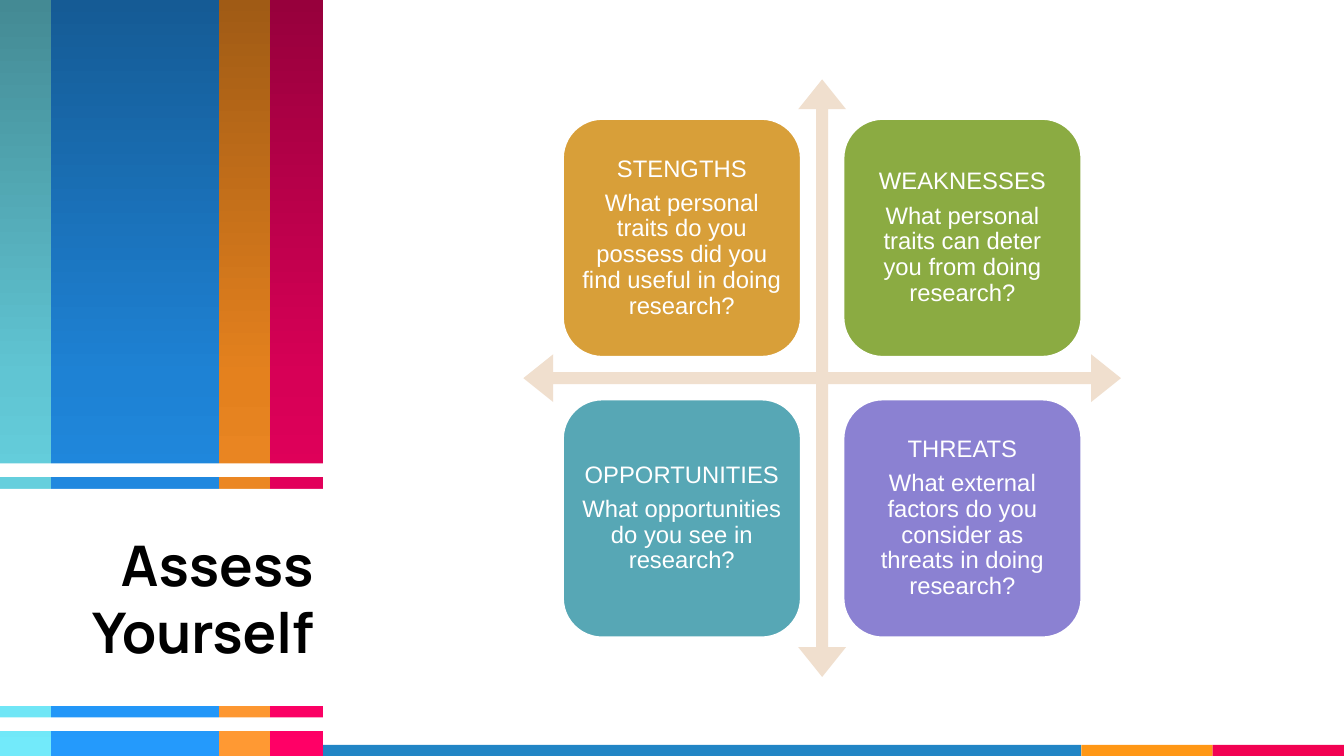
import copy

import pptx
import pptx.util
import pptx.dml.color
import pptx.enum.shapes
import pptx.enum.text

Cm = pptx.util.Cm
Pt = pptx.util.Pt
RGBColor = pptx.dml.color.RGBColor
MSO_SHAPE = pptx.enum.shapes.MSO_SHAPE
PP_ALIGN = pptx.enum.text.PP_ALIGN
MSO_ANCHOR = pptx.enum.text.MSO_ANCHOR
MSO_AUTO_SIZE = pptx.enum.text.MSO_AUTO_SIZE

WHITE = RGBColor(0xFF, 0xFF, 0xFF)
BLACK = RGBColor(0x00, 0x00, 0x00)
SAND = RGBColor(0xF0, 0xDF, 0xCE)
OCHRE = RGBColor(0xD8, 0x9F, 0x39)
GREEN = RGBColor(0x8B, 0xAB, 0x42)
TEAL = RGBColor(0x57, 0xA7, 0xB5)
VIOLET = RGBColor(0x8B, 0x81, 0xD2)
FOOTER_BLUE = RGBColor(0x21, 0x85, 0xC5)
FOOTER_ORANGE = RGBColor(0xFF, 0x97, 0x15)
FOOTER_PINK = RGBColor(0xF2, 0x02, 0x53)
CYAN_RAMP = (RGBColor(0x44, 0x8A, 0x94), RGBColor(0x60, 0xC5, 0xD3), RGBColor(0x72, 0xEA, 0xFA))
BLUE_RAMP = (RGBColor(0x15, 0x5B, 0x95), RGBColor(0x1E, 0x82, 0xD4), RGBColor(0x24, 0x9A, 0xFC))
ORANGE_RAMP = (RGBColor(0xA0, 0x5B, 0x15), RGBColor(0xE4, 0x81, 0x1E), RGBColor(0xFF, 0x99, 0x33))
PINK_RAMP = (RGBColor(0x97, 0x00, 0x3C), RGBColor(0xD7, 0x00, 0x56), RGBColor(0xFF, 0x00, 0x66))

TITLE = "Assess Yourself"
QUADRANTS = [
    ("STENGTHS", "What personal traits do you possess did you find useful in doing research?", OCHRE),
    ("WEAKNESSES", "What personal traits can deter you from doing research?", GREEN),
    ("OPPORTUNITIES", "What opportunities do you see in research?", TEAL),
    ("THREATS", "What external factors do you consider as threats in doing research?", VIOLET),
]
BANDS = [(1.29, CYAN_RAMP), (4.23, BLUE_RAMP), (1.29, ORANGE_RAMP), (1.34, PINK_RAMP)]
FOOTER = [(23.95, FOOTER_BLUE), (3.31, FOOTER_ORANGE), (3.31, FOOTER_PINK)]

PAGE_WIDTH, PAGE_HEIGHT = 33.87, 19.05
PANEL_WIDTH = sum(width for width, ramp in BANDS)
FOOTER_HEIGHT = 0.28
STRIPE_TOPS, STRIPE_HEIGHT = (11.68, 18.08), 0.34
TITLE_TOP, TITLE_HEIGHT = 12.32, 5.47
CENTER_X, CENTER_Y = 20.72, 9.53
ARROW_SIZE, ARROW_SHAPE = 15.06, (0.02, 0.04, 0.05)
CARD_SIZE, CARD_PITCH = 6.02, 7.07


def add_block(page, kind, left, top, width, height, color=None):
    block = page.shapes.add_shape(kind, Cm(left), Cm(top), Cm(width), Cm(height))
    block.shadow.inherit = False
    block.line.fill.background()
    if color is not None:
        block.fill.solid()
        block.fill.fore_color.rgb = color
    return block


def fill_ramp(block, ramp):
    block.fill.gradient()
    block.fill.gradient_angle = 270
    first = block.fill.gradient_stops[0]._gs
    first.addnext(copy.deepcopy(first))
    for index, (stop, color) in enumerate(zip(block.fill.gradient_stops, ramp)):
        stop.position = index / 2
        stop.color.rgb = color


def add_panel(page):
    left = 0
    for width, ramp in BANDS:
        band = add_block(page, MSO_SHAPE.RECTANGLE, left, 0, width, PAGE_HEIGHT)
        fill_ramp(band, ramp)
        left += width
    for top in STRIPE_TOPS:
        add_block(page, MSO_SHAPE.RECTANGLE, 0, top, PANEL_WIDTH, STRIPE_HEIGHT, WHITE)


def add_footer(page):
    left = PAGE_WIDTH - sum(width for width, color in FOOTER)
    for width, color in FOOTER:
        add_block(page, MSO_SHAPE.RECTANGLE, left, PAGE_HEIGHT - FOOTER_HEIGHT,
                  width, FOOTER_HEIGHT, color)
        left += width


def place_title(page):
    title = page.shapes.title
    title.left, title.top = Cm(0), Cm(TITLE_TOP)
    title.width, title.height = Cm(PANEL_WIDTH), Cm(TITLE_HEIGHT)
    title.fill.solid()
    title.fill.fore_color.rgb = WHITE
    title.element.getparent().append(title.element)
    frame = title.text_frame
    frame.text = TITLE
    frame.word_wrap = True
    frame.auto_size = MSO_AUTO_SIZE.NONE
    frame.vertical_anchor = MSO_ANCHOR.MIDDLE
    para = frame.paragraphs[0]
    para.alignment = PP_ALIGN.RIGHT
    para.font.name, para.font.size, para.font.bold = "Manrope", Pt(40), True
    para.font.color.rgb = BLACK


def add_card(page, index, heading, question, color):
    row, column = divmod(index, 2)
    left = CENTER_X + (column - 0.5) * CARD_PITCH - CARD_SIZE / 2
    top = CENTER_Y + (row - 0.5) * CARD_PITCH - CARD_SIZE / 2
    card = add_block(page, MSO_SHAPE.ROUNDED_RECTANGLE, left, top, CARD_SIZE, CARD_SIZE, color)
    card.line.color.rgb = WHITE
    card.line.width = Pt(2)
    frame = card.text_frame
    frame.word_wrap = True
    frame.vertical_anchor = MSO_ANCHOR.MIDDLE
    frame.margin_left = frame.margin_right = Cm(0.18)
    frame.margin_top = frame.margin_bottom = Cm(0.18)
    frame.text = heading + "\n" + question
    for para in frame.paragraphs:
        para.alignment = PP_ALIGN.CENTER
        para.line_spacing = 0.9
        para.space_after = Pt(6)
        para.font.name, para.font.size = "Arial", Pt(17)
        para.font.color.rgb = WHITE


def add_matrix(page):
    arrow = add_block(page, MSO_SHAPE.QUAD_ARROW, CENTER_X - ARROW_SIZE / 2,
                      CENTER_Y - ARROW_SIZE / 2, ARROW_SIZE, ARROW_SIZE, SAND)
    for index, value in enumerate(ARROW_SHAPE):
        arrow.adjustments[index] = value
    for index, quadrant in enumerate(QUADRANTS):
        add_card(page, index, *quadrant)


def main():
    deck = pptx.Presentation()
    deck.slide_width, deck.slide_height = Cm(PAGE_WIDTH), Cm(PAGE_HEIGHT)
    page = deck.slides.add_slide(deck.slide_layouts[5])
    add_footer(page)
    add_panel(page)
    place_title(page)
    add_matrix(page)
    deck.save("out.pptx")


if __name__ == "__main__":
    main()
